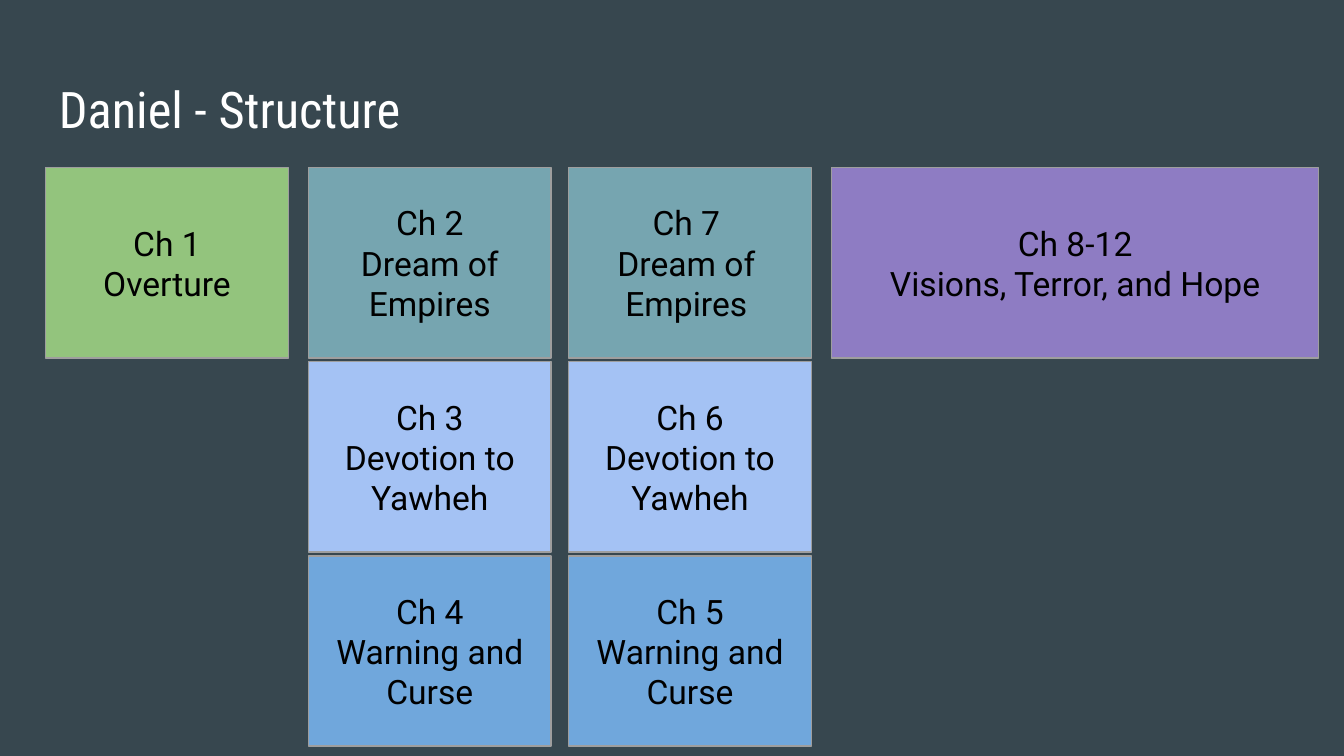
from pptx import Presentation
from pptx.dml.color import RGBColor
from pptx.enum import shapes, text
from pptx.util import Pt

HUES = {
    "back": "37474F", "edge": "9E9E9E", "white": "FFFFFF", "black": "000000",
    "green": "93C47D", "teal": "76A5B0", "pale": "A4C2F4",
    "blue": "70A7DC", "plum": "8E7CC3",
}


class Deck:
    font = "Roboto"
    size = 18
    inset = 7.2

    def __init__(self, wide, high):
        self.file = Presentation()
        self.file.slide_width, self.file.slide_height = Pt(wide), Pt(high)
        self.slide = self.file.slides.add_slide(self.file.slide_layouts[6])
        self.paint(self.slide.background.fill, "back")

    def paint(self, fill, hue):
        fill.solid()
        fill.fore_color.rgb = RGBColor.from_string(HUES[hue])

    def box(self, area, hue):
        rect = self.slide.shapes.add_shape(
            shapes.MSO_SHAPE.RECTANGLE, *map(Pt, area))
        rect.shadow.inherit = False
        self.paint(rect.fill, hue)
        self.paint(rect.line.fill, "edge")
        rect.line.width = Pt(0.75)

    def label(self, area, words, hue="black", font=font, size=size,
              align=text.PP_ALIGN.CENTER):
        frame = self.slide.shapes.add_textbox(*map(Pt, area)).text_frame
        frame.word_wrap = True
        frame.vertical_anchor = text.MSO_ANCHOR.MIDDLE
        frame.margin_left = frame.margin_right = Pt(self.inset)
        frame.margin_top = frame.margin_bottom = Pt(self.inset)
        frame.text = words
        for para in frame.paragraphs:
            para.alignment = align
            for run in para.runs:
                run.font.name = font
                run.font.size = Pt(size)
                self.paint(run.font.fill, hue)


def main():
    deck = Deck(720, 405)
    deck.label((24.5, 35.3, 671, 45.4), "Daniel - Structure", "white",
               "Roboto Condensed", 27, text.PP_ALIGN.LEFT)

    cols = (24.5, 165.3, 304.7, 445.5)
    top, step, high = 89.8, 104, 102
    slim, broad = 130, 261
    cells = [
        (0, 0, slim, "green", "Ch 1\nOverture", 0),
        (3, 0, broad, "plum", "Ch 8-12\nVisions, Terror, and Hope", 0),
    ]
    themes = (
        ("teal", "Dream of Empires", -2),
        ("pale", "Devotion to Yawheh", 0),
        ("blue", "Warning and Curse", 0),
    )
    for row, (hue, theme, shift) in enumerate(themes):
        cells.append((1, row, slim, hue, f"Ch {2 + row}\n{theme}", 0))
        cells.append((2, row, slim, hue, f"Ch {7 - row}\n{theme}", shift))

    for col, row, wide, hue, words, shift in cells:
        left, y = cols[col], top + row * step
        deck.box((left, y, wide, high), hue)
        deck.label((left + shift, y, wide, high), words)

    deck.file.save("out.pptx")


if __name__ == "__main__":
    main()
